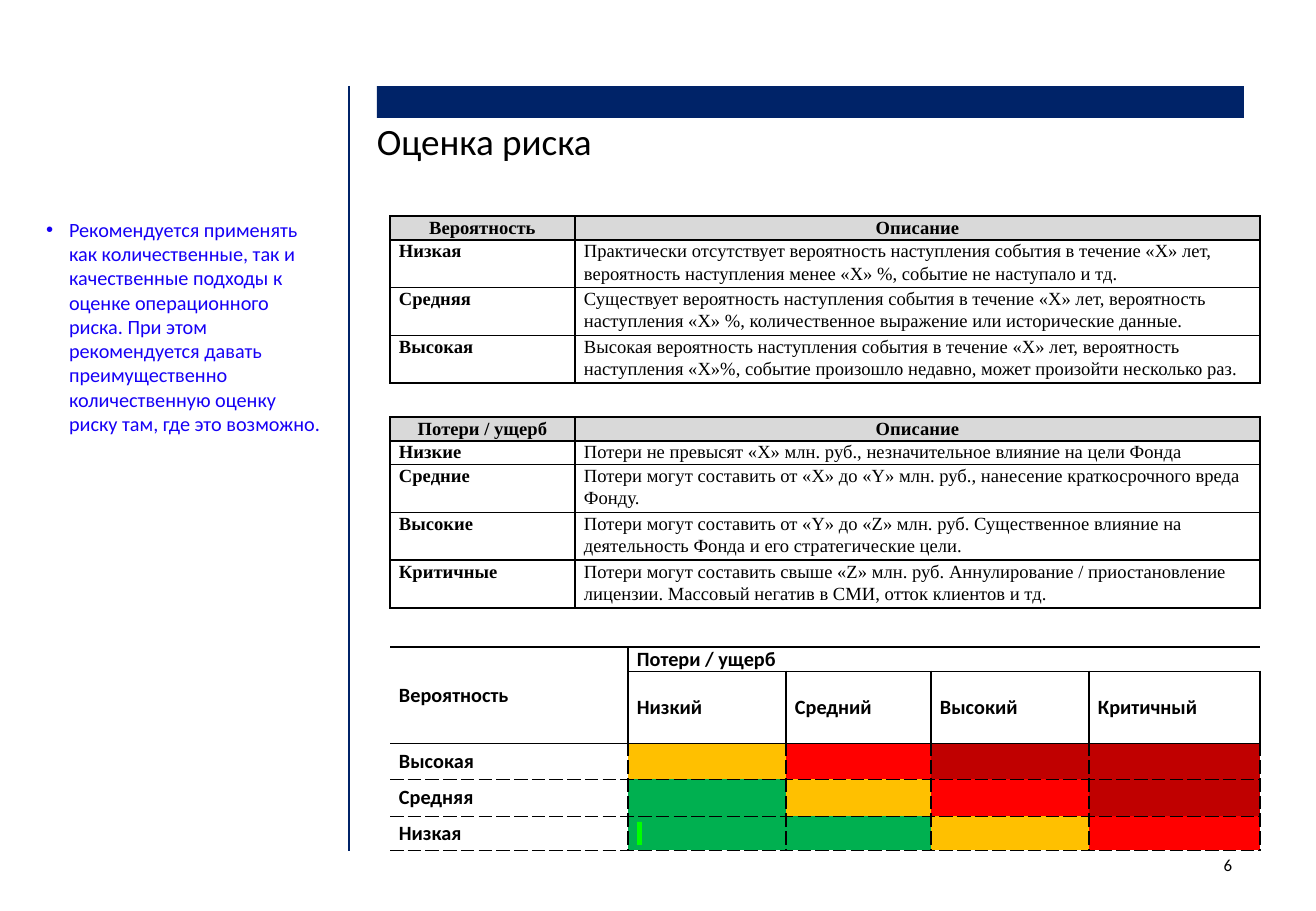
from lxml.etree import SubElement
from pptx import Presentation
from pptx.dml.color import RGBColor
from pptx.enum.shapes import MSO_CONNECTOR, MSO_SHAPE
from pptx.enum.text import MSO_ANCHOR, PP_ALIGN
from pptx.oxml import parse_xml
from pptx.oxml.ns import nsdecls, qn
from pptx.util import Emu, Pt

TITLE = "Оценка риска"
ADVICE = (
    "Рекомендуется применять как количественные, так и качественные подходы к "
    "оценке операционного риска. При этом рекомендуется давать преимущественно "
    "количественную оценку риску там, где это возможно."
)
CHANCE = [
    ("Вероятность", "Описание", 1),
    ("Низкая", "Практически отсутствует вероятность наступления события в течение "
     "«Х» лет, вероятность наступления менее «Х» %, событие не наступало и тд.", 2),
    ("Средняя", "Существует вероятность наступления события в течение «Х» лет, "
     "вероятность наступления «Х» %, количественное выражение или исторические данные.", 2),
    ("Высокая", "Высокая вероятность наступления события в течение «Х» лет, вероятность "
     "наступления «Х»%, событие произошло недавно, может произойти несколько раз.", 2),
]
LOSS = [
    ("Потери / ущерб", "Описание", 1),
    ("Низкие", "Потери не превысят «Х» млн. руб., незначительное влияние на цели Фонда", 1),
    ("Средние", "Потери могут составить от «Х» до «Y» млн. руб., нанесение "
     "краткосрочного вреда Фонду.", 2),
    ("Высокие", "Потери могут составить от «Y» до «Z» млн. руб. Существенное влияние на "
     "деятельность Фонда и его стратегические цели.", 2),
    ("Критичные", "Потери могут составить свыше «Z» млн. руб. Аннулирование / "
     "приостановление лицензии. Массовый негатив в СМИ, отток клиентов и тд.", 2),
]
MATRIX = [
    ("Вероятность", "Потери / ущерб", "", "", ""),
    ("", "Низкий", "Средний", "Высокий", "Критичный"),
    ("Высокая", "", "", "", ""),
    ("Средняя", "", "", "", ""),
    ("Низкая", "", "", "", ""),
]
LEVELS = ["00B050", "FFC000", "FF0000", "C00000"]
RISK = [(1, 2, 3, 3), (0, 1, 2, 3), (0, 0, 1, 2)]
NAVY, BLACK, WHITE, GREY = "002368", "000000", "FFFFFF", "D9D9D9"
LEFT, LINE, PAD = 390, 22, 9


def px(n):
    return Emu(round(n * 914400 / 121.5))


def rgb(code):
    return RGBColor.from_string(code)


def style(para, size, color=BLACK, face="Calibri", bold=False):
    font = para.font
    font.size, font.name, font.bold = Pt(size), face, bold
    font.color.rgb = rgb(color)


def bar(box, color):
    shape = slide.shapes.add_shape(MSO_SHAPE.RECTANGLE, *map(px, box))
    shape.shadow.inherit = False
    shape.fill.solid()
    shape.fill.fore_color.rgb = rgb(color)
    shape.line.fill.background()


def label(box, text, pad=(0, 0), wrap=True):
    frame = slide.shapes.add_textbox(*map(px, box)).text_frame
    frame.word_wrap = wrap
    frame.margin_left = frame.margin_right = px(pad[0])
    frame.margin_top = frame.margin_bottom = px(pad[1])
    frame.text = text
    return frame.paragraphs[0]


def edge(cell, sides):
    props = cell._tc.get_or_add_tcPr()
    for spot, (side, dash) in enumerate(sides.items()):
        if dash:
            body = (f'<a:solidFill><a:srgbClr val="{BLACK}"/></a:solidFill>'
                    f'<a:prstDash val="{dash}"/>')
        else:
            body = "<a:noFill/>"
        props.insert(spot, parse_xml(
            f'<a:ln{side} {nsdecls("a")} w="12700">{body}</a:ln{side}>'))


def grid(top, cols, rows):
    box = (LEFT, top, sum(cols), sum(rows))
    table = slide.shapes.add_table(len(rows), len(cols), *map(px, box)).table
    table.first_row = table.horz_banding = False
    for col, wide in zip(table.columns, cols):
        col.width = px(wide)
    for row, high in zip(table.rows, rows):
        row.height = px(high)
    return table


def put(cell, text, fill, middle, sides):
    cell.margin_left = cell.margin_right = px(PAD)
    cell.margin_top = cell.margin_bottom = 0
    cell.vertical_anchor = MSO_ANCHOR.MIDDLE if middle else MSO_ANCHOR.TOP
    cell.fill.solid()
    cell.fill.fore_color.rgb = rgb(fill)
    edge(cell, sides)
    cell.text = text
    return cell.text_frame.paragraphs[0]


def scale(top, data):
    table = grid(top, (185, 685), [LINE * lines for *_, lines in data])
    for r, row in enumerate(data):
        for c, text in enumerate(row[:2]):
            head = r == 0
            para = put(table.cell(r, c), text, GREY if head else WHITE, head,
                       dict.fromkeys("LRTB", "solid"))
            para.alignment = PP_ALIGN.CENTER if head else PP_ALIGN.LEFT
            para.line_spacing = 1.07
            style(para, 11, face="Times New Roman", bold=head or c == 0)


def matrix(top):
    table = grid(top, (238, 158, 145, 158, 171), (24, 72, 36, 37, 34))
    table.cell(0, 0).merge(table.cell(1, 0))
    table.cell(0, 1).merge(table.cell(0, 4))
    for r, row in enumerate(MATRIX):
        body = "dash" if r > 1 else "solid"
        for c, text in enumerate(row):
            sides = {
                "L": body if c and (r or c == 1) else None,
                "R": body if r or c == 0 else None,
                "T": "dash" if r > 2 else "solid",
                "B": body,
            }
            fill = LEVELS[RISK[r - 2][c - 1]] if r > 1 and c else WHITE
            para = put(table.cell(r, c), text, fill, True, sides)
            style(para, 12, bold=True)
            if not text:
                SubElement(para._p, qn("a:endParaRPr"), sz="1200")


deck = Presentation()
deck.slide_width, deck.slide_height = px(1316), px(911)
slide = deck.slides.add_slide(deck.slide_layouts[6])

bar((377, 86, 867, 32), NAVY)
rule = slide.shapes.add_connector(
    MSO_CONNECTOR.STRAIGHT, *map(px, (349, 86, 349, 851)))
rule.line.color.rgb = rgb(NAVY)
rule.line.width = Pt(0.75)
SubElement(rule._element.spPr, qn("a:effectLst"))

number = label((1148, 849, 96, 61), "6", (12, 6))
number.alignment = PP_ALIGN.RIGHT
style(number, 10)
style(label((377, 118, 867, 47), TITLE, wrap=False), 22)

advice = label((46, 217, 275, 612), ADVICE)
props = advice._p.get_or_add_pPr()
props.set("marL", str(px(23)))
props.set("indent", str(px(-23)))
SubElement(props, qn("a:buFont"), typeface="Arial")
SubElement(props, qn("a:buChar"), char="•")
style(advice, 12, "1600F5")

matrix(647)
scale(216, CHANCE)
scale(417, LOSS)
bar((637, 822, 5, 23), "00FF00")

deck.save("out.pptx")
